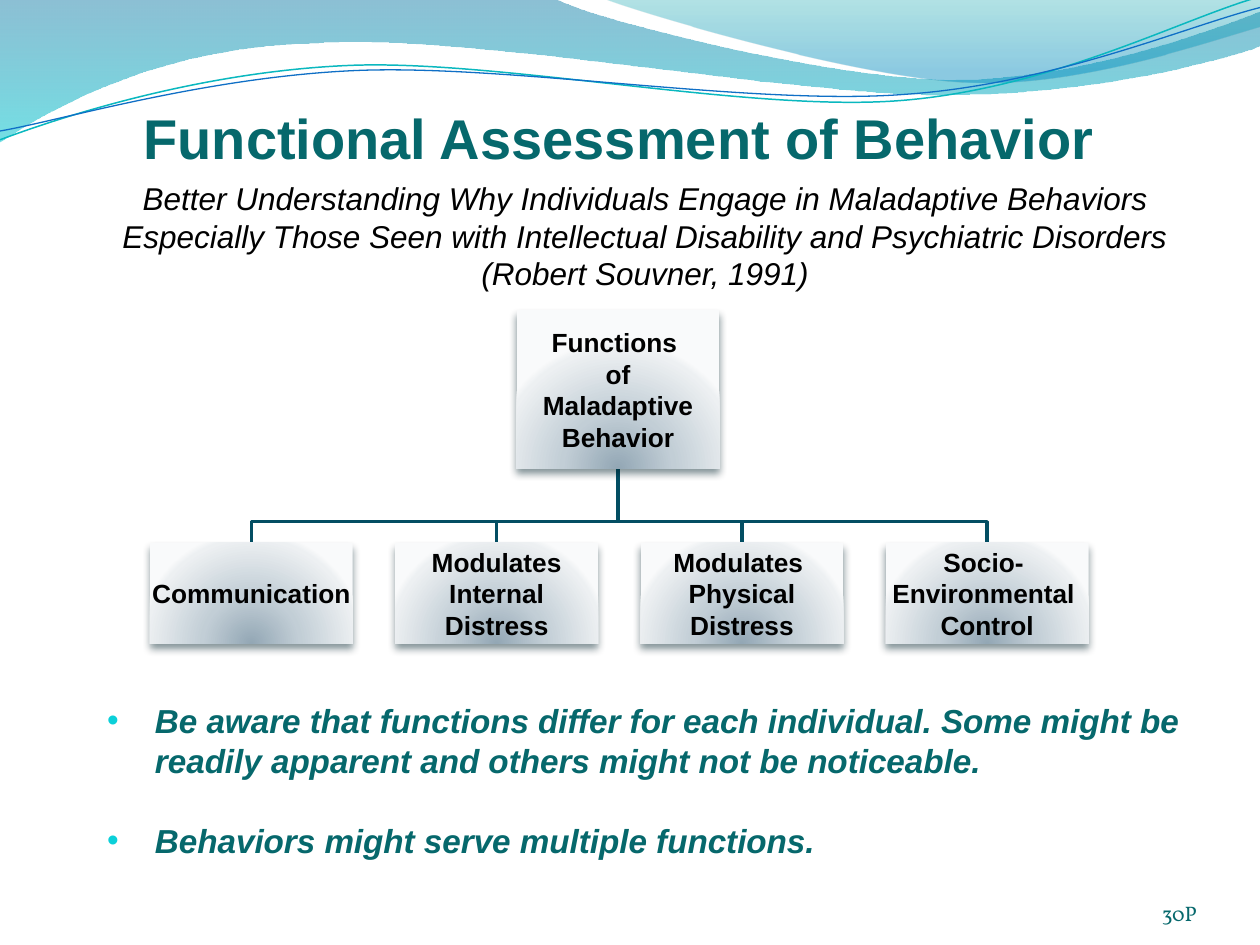
from dataclasses import dataclass

from lxml import etree
from pptx import Presentation
from pptx.dml.color import RGBColor
from pptx.enum.shapes import MSO_SHAPE
from pptx.enum.text import MSO_ANCHOR, MSO_AUTO_SIZE, PP_ALIGN
from pptx.oxml import parse_xml
from pptx.oxml.ns import nsdecls, qn
from pptx.util import Inches, Pt

RECTANGLE = MSO_SHAPE.RECTANGLE
LEFT, CENTER, RIGHT = PP_ALIGN.LEFT, PP_ALIGN.CENTER, PP_ALIGN.RIGHT
TOP, MIDDLE, BOTTOM = MSO_ANCHOR.TOP, MSO_ANCHOR.MIDDLE, MSO_ANCHOR.BOTTOM
NO_AUTOFIT = MSO_AUTO_SIZE.NONE


@dataclass(frozen=True)
class Theme:
    """Fonts, colours and type sizes of the slide."""
    font: str = "Arial"
    number_font: str = "Vollkorn"
    black: str = "000000"
    teal: str = "06686C"
    bullet: str = "0BD0D9"
    branch: str = "034E63"
    shadow: str = "00232C"
    heading_size: int = 32
    list_size: int = 19
    title_size: int = 18
    box_size: int = 15
    number_size: int = 12
    card: tuple = ((0, "93A7B5", 100), (43, "C2CED6", 100),
                   (93, "EDF0F2", 100), (100, "F9FAFB", 100))


THEME = Theme()
DOWNWARD = '<a:lin ang="5400000" scaled="0"/>'
GLOW_FROM_BELOW = ('<a:path path="circle"><a:fillToRect l="50000" t="130000" '
                   'r="50000" b="-30000"/></a:path>')

BANDS = [
    ([(0, 0), (4.4, -0.01),
      (4.76, 0.17, 6.64, 0.63, 7.58, 0.63), (8.53, 0.63, 9.58, 0.26, 10, 0.09),
      (10.01, 0.36),
      (9.83, 0.44, 8.7, 0.76, 7.46, 0.75), (6.22, 0.75, 3.82, 0.28, 2.57, 0.34),
      (1.29, 0.36, 0.46, 0.83, -0.01, 1.13)],
     [(0, "0074A1", 45), (100, "00C6CF", 55)]),
    ([(4.79, -0.01),
      (5.09, 0.11, 6.82, 0.62, 7.69, 0.65), (8.56, 0.69, 9.61, 0.32, 10, 0.21),
      (10, 0)],
     [(0, "00A1A9", 30), (80, "008BBF", 45)]),
]
WAVES = [
    ([(0, 1.11), (0.48, 0.93, 1.58, 0.57, 2.77, 0.52),
      (3.95, 0.47, 5.93, 0.89, 7.13, 0.8), (8.33, 0.71, 9.38, 0.15, 9.98, -0.02)],
     "0AB8BF", 0.85),
    ([(0, 1.04), (0.47, 0.96, 1.64, 0.61, 2.83, 0.56),
      (4.03, 0.51, 5.97, 0.84, 7.17, 0.75), (8.36, 0.67, 9.41, 0.21, 10, 0.06)],
     "0F6FC6", 0.75),
]
FUNCTIONS = [
    ["Communication"],
    ["Modulates", "Internal", "Distress"],
    ["Modulates ", "Physical", "Distress"],
    ["Socio- ", "Environmental ", "Control"],
]
BOX_WIDTH, ROOT_HEIGHT, BOX_HEIGHT = 1.61, 1.26, 0.8
FIRST_LEFT, LAST_LEFT, ROOT_LEFT = 1.19, 7.03, 4.1
ROOT_TOP, BRANCH_TOP, ROW_TOP = 2.46, 4.14, 4.31


def write_text(shape, lines, size, color=THEME.black, font=THEME.font, bold=False,
               italic=False, align=CENTER, anchor=MIDDLE, insets=(0.1, 0.05, 0.1, 0.05)):
    """Fill a shape with one formatted paragraph per line."""
    frame = shape.text_frame
    frame.word_wrap = True
    frame.auto_size = NO_AUTOFIT
    frame.vertical_anchor = anchor
    (frame.margin_left, frame.margin_top,
     frame.margin_right, frame.margin_bottom) = map(Inches, insets)
    frame.text = "\n".join(lines)
    for para in frame.paragraphs:
        para.alignment = align
        para.space_before = Pt(0)
        for span in para.runs:
            span.font.size = Pt(size)
            span.font.name = font
            span.font.bold = bold
            span.font.italic = italic
            span.font.color.rgb = RGBColor.from_string(color)


def place(shape, left, top, width, height):
    """Move and size a shape in inches."""
    shape.left, shape.top = Inches(left), Inches(top)
    shape.width, shape.height = Inches(width), Inches(height)
    return shape


def add_box(page, left, top, width, height):
    """Add an empty text box."""
    return page.shapes.add_textbox(*map(Inches, (left, top, width, height)))


def set_gradient(shape, stops, direction):
    """Give a shape a gradient of (position, colour, opacity) stops."""
    shape.fill.gradient()
    stop_xml = "".join(
        f'<a:gs pos="{position * 1000}"><a:srgbClr val="{color}">'
        f'<a:alpha val="{opacity * 1000}"/></a:srgbClr></a:gs>'
        for position, color, opacity in stops)
    gradient = parse_xml(f'<a:gradFill {nsdecls("a")} rotWithShape="1">'
                         f'<a:gsLst>{stop_xml}</a:gsLst>{direction}</a:gradFill>')
    properties = shape.element.spPr
    properties.replace(properties.find(qn("a:gradFill")), gradient)


def set_shadow(shape):
    """Cast a soft shadow straight down."""
    shape.shadow.inherit = False
    shape.element.spPr.find(qn("a:effectLst")).append(parse_xml(
        f'<a:outerShdw {nsdecls("a")} blurRad="{Pt(4.5)}" dist="{Pt(3)}" dir="5400000" '
        f'rotWithShape="0"><a:srgbClr val="{THEME.shadow}"><a:alpha val="48000"/>'
        '</a:srgbClr></a:outerShdw>'))


def add_outline(page, segments, close):
    """Draw a freeform whose six-number segments are cubic curves."""
    points = [(Inches(x), Inches(y)) for segment in segments
              for x, y in zip(segment[::2], segment[1::2])]
    builder = page.shapes.build_freeform(*points[0])
    builder.add_line_segments(points[1:], close=close)
    shape = builder.convert_to_shape()
    shape.shadow.inherit = False
    steps = iter(list(shape.element.spPr.iter(qn("a:lnTo"))))
    for segment in segments[1:]:
        step = next(steps)
        if len(segment) == 6:
            curve = parse_xml(f'<a:cubicBezTo {nsdecls("a")}/>')
            step.addprevious(curve)
            for control in (step, next(steps), next(steps)):
                curve.append(control[0])
                control.getparent().remove(control)
    return shape


def add_band(page, segments, stops):
    """Draw a closed gradient band."""
    band = add_outline(page, segments, close=True)
    set_gradient(band, stops, DOWNWARD)
    band.line.fill.background()


def add_line(page, segments, color, weight):
    """Draw an open line."""
    line = add_outline(page, segments, close=False)
    line.fill.background()
    line.line.color.rgb = RGBColor.from_string(color)
    line.line.width = Pt(weight)


def add_card(page, lines, left, top, height):
    """Draw one box of the function chart."""
    card = page.shapes.add_shape(
        RECTANGLE, *map(Inches, (left, top, BOX_WIDTH, height)))
    set_gradient(card, THEME.card, GLOW_FROM_BELOW)
    card.line.fill.background()
    set_shadow(card)
    write_text(card, lines, THEME.box_size, bold=True, insets=(0.01,) * 4)


def add_function_chart(page):
    """Draw the root box, its branches and the row of functions."""
    pitch = (LAST_LEFT - FIRST_LEFT) / (len(FUNCTIONS) - 1)
    lefts = [FIRST_LEFT + pitch * index for index in range(len(FUNCTIONS))]
    root_x = ROOT_LEFT + BOX_WIDTH / 2
    for left in reversed(lefts):
        x = left + BOX_WIDTH / 2
        add_line(page, [(root_x, ROOT_TOP + ROOT_HEIGHT), (root_x, BRANCH_TOP),
                        (x, BRANCH_TOP), (x, ROW_TOP)], THEME.branch, 2)
    add_card(page, ["Functions ", "of", "Maladaptive", "Behavior"],
             ROOT_LEFT, ROOT_TOP, ROOT_HEIGHT)
    for left, lines in zip(lefts, FUNCTIONS):
        add_card(page, lines, left, ROW_TOP, BOX_HEIGHT)


def add_bullets(shape):
    """Give each paragraph a coloured bullet and a hanging indent."""
    for para in shape.text_frame.paragraphs:
        properties = para._p.get_or_add_pPr()
        properties.set("marL", str(Inches(0.38)))
        properties.set("indent", str(-Inches(0.38)))
        color = etree.SubElement(properties, qn("a:buClr"))
        etree.SubElement(color, qn("a:srgbClr"), val=THEME.bullet)
        etree.SubElement(properties, qn("a:buFont"), typeface=THEME.font)
        etree.SubElement(properties, qn("a:buChar"), char="•")


def main():
    """Build the slide and save it."""
    deck = Presentation()
    deck.slide_width, deck.slide_height = Inches(10), Inches(7.5)
    page = deck.slides.add_slide(deck.slide_layouts[1])
    for segments, stops in BANDS:
        add_band(page, segments, stops)
    for segments, color, weight in WAVES:
        add_line(page, segments, color, weight)

    title = place(page.shapes.title, 0.58, 1.3, 9.08, 1.02)
    write_text(title, [
        "Better Understanding Why Individuals Engage in Maladaptive Behaviors Especially "
        "Those Seen with Intellectual Disability and Psychiatric Disorders\v"
        "(Robert Souvner, 1991)"], THEME.title_size, italic=True, anchor=BOTTOM,
        insets=(0, 0.05, 0, 0))
    add_function_chart(page)
    heading = add_box(page, 1, 0.77, 7.83, 0.64)
    write_text(heading, ["Functional Assessment of Behavior"], THEME.heading_size,
               THEME.teal, bold=True, anchor=TOP)

    advice = place(page.placeholders[1], 0.75, 5.51, 8.92, 1.38)
    write_text(advice, [
        "Be aware that functions differ for each individual. Some might be readily "
        "apparent and others might not be noticeable.",
        "Behaviors might serve multiple functions."], THEME.list_size, THEME.teal,
        bold=True, italic=True, align=LEFT, anchor=TOP)
    advice.text_frame.paragraphs[1].space_before = Pt(23)
    add_bullets(advice)

    number = add_box(page, 8.67, 6.95, 0.83, 0.4)
    write_text(number, ["30P"], THEME.number_size, THEME.teal, THEME.number_font,
               align=RIGHT, anchor=BOTTOM, insets=(0,) * 4)
    deck.save("out.pptx")


if __name__ == "__main__":
    main()
